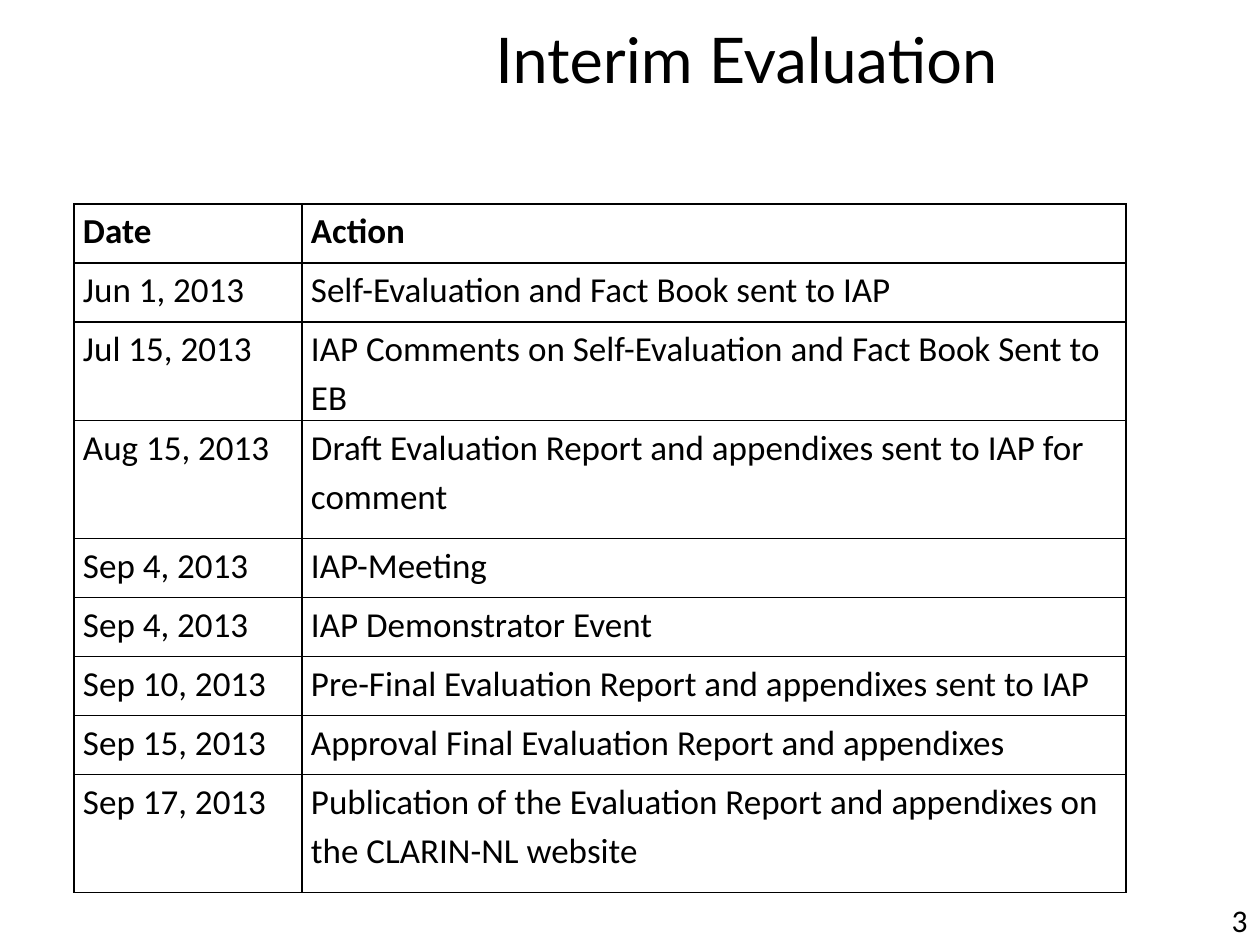
"""Build the interim evaluation schedule slide."""
from lxml.etree import SubElement
from pptx import Presentation
from pptx.dml.color import RGBColor
from pptx.enum.text import MSO_ANCHOR, PP_ALIGN
from pptx.oxml.ns import qn
from pptx.util import Emu, Pt

TITLE = "Interim Evaluation"
PAGE_NUMBER = "3"
BLACK = "000000"
SCHEDULE = [
    ("Date", "Action"),
    ("Jun 1, 2013", "Self-Evaluation and Fact Book sent to IAP"),
    ("Jul 15, 2013", "IAP Comments on Self-Evaluation and Fact Book Sent to EB"),
    ("Aug 15, 2013", "Draft Evaluation Report and appendixes sent to IAP for comment"),
    ("Sep 4, 2013", "IAP-Meeting"),
    ("Sep 4, 2013", "IAP Demonstrator Event"),
    ("Sep 10, 2013", "Pre-Final Evaluation Report and appendixes sent to IAP"),
    ("Sep 15, 2013", "Approval Final Evaluation Report and appendixes"),
    ("Sep 17, 2013", "Publication of the Evaluation Report and appendixes on the CLARIN-NL website"),
]
COLUMN_WIDTHS = (228, 824)
ROW_HEIGHT = 59
DOUBLE_ROWS = (3, 8)
TITLE_FORMAT = {"name": "Lato", "size": Pt(36), "bold": False}
NUMBER_FORMAT = {"name": "Calibri", "size": Pt(18), "bold": False}
CELL_FORMAT = {"name": "Calibri", "size": Pt(20)}
CELL_MARGINS = {"margin_left": 9, "margin_right": 9, "margin_top": 0, "margin_bottom": 0}


def px(length):
    return Emu(round(length * 914400 / 126))


def color(value):
    return RGBColor.from_string(value)


def place(box, left, top, width, height):
    box.left, box.top, box.width, box.height = map(px, (left, top, width, height))


def write(frame, text, values, align):
    para = frame.paragraphs[0]
    para.alignment = align
    span = para.add_run()
    span.text = text
    for name, value in values.items():
        setattr(span.font, name, value)
    span.font.color.rgb = color(BLACK)
    return para


def add_borders(cell):
    properties = cell._tc.get_or_add_tcPr()
    for index, side in enumerate(("lnL", "lnR", "lnT", "lnB")):
        line = SubElement(properties, qn(f"a:{side}"), w=str(Pt(1)))
        fill = SubElement(line, qn("a:solidFill"))
        SubElement(fill, qn("a:srgbClr"), val=BLACK)
        properties.insert(index, line)


def add_schedule(page):
    heights = [ROW_HEIGHT * (2 if row in DOUBLE_ROWS else 1) for row in range(len(SCHEDULE))]
    bounds = map(px, (74, 204, sum(COLUMN_WIDTHS), sum(heights)))
    table = page.shapes.add_table(len(SCHEDULE), len(COLUMN_WIDTHS), *bounds).table
    table.horz_banding = False
    for column, width in zip(table.columns, COLUMN_WIDTHS):
        column.width = px(width)
    for row_index, (row, height, texts) in enumerate(zip(table.rows, heights, SCHEDULE)):
        row.height = px(height)
        for cell, text in zip(row.cells, texts):
            for name, value in CELL_MARGINS.items():
                setattr(cell, name, px(value))
            cell.fill.background()
            add_borders(cell)
            values = CELL_FORMAT | {"bold": row_index == 0}
            write(cell.text_frame, text, values, PP_ALIGN.LEFT).line_spacing = 1.15


def main():
    deck = Presentation()
    deck.slide_width, deck.slide_height = px(1260), px(945)
    page = deck.slides.add_slide(deck.slide_layouts[5])
    title = page.shapes.title
    place(title, 233, 0, 1027, 116)
    title.text_frame.vertical_anchor = MSO_ANCHOR.MIDDLE
    write(title.text_frame, TITLE, TITLE_FORMAT, PP_ALIGN.CENTER)
    add_schedule(page)
    number = page.shapes.add_textbox(*map(px, (1126, 895, 134, 50)))
    number.text_frame.word_wrap = True
    write(number.text_frame, PAGE_NUMBER, NUMBER_FORMAT, PP_ALIGN.RIGHT)
    deck.save("out.pptx")


if __name__ == "__main__":
    main()
